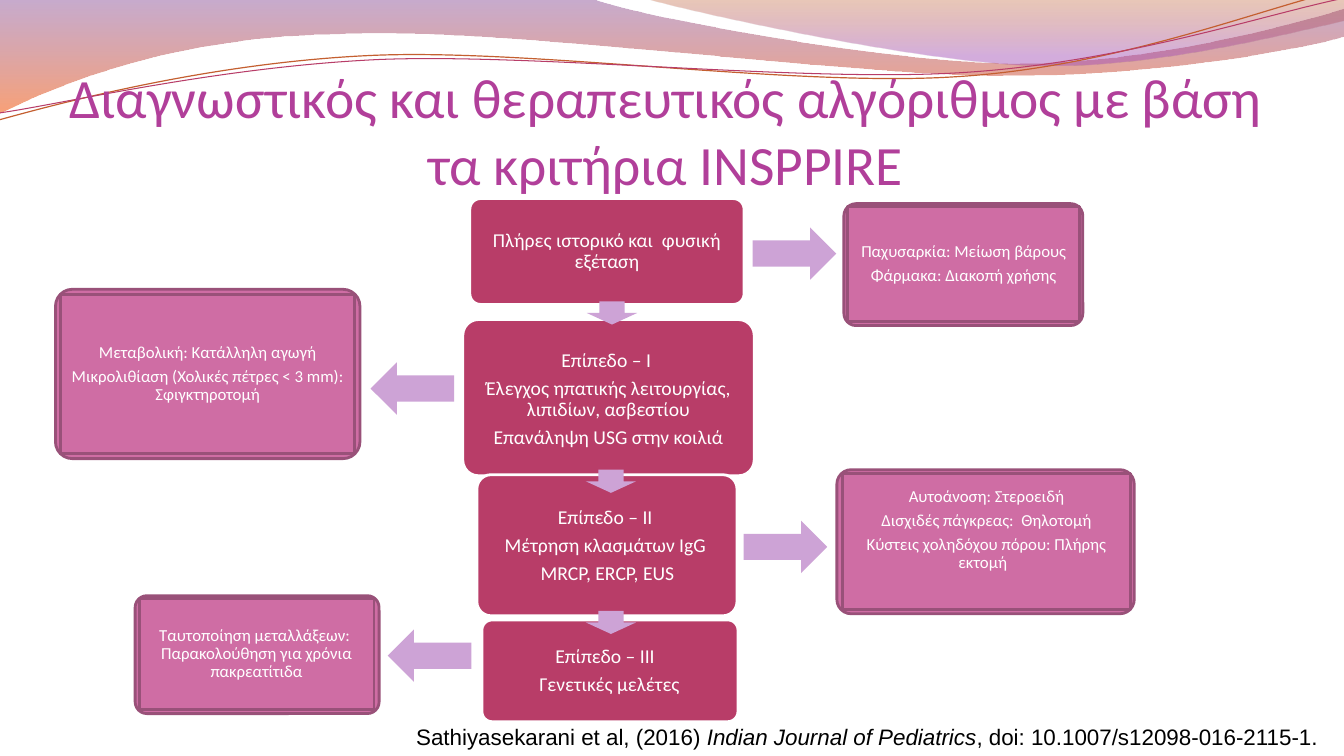
import math
from dataclasses import dataclass
from typing import Any

from lxml import etree
from pptx import Presentation
from pptx import util as u
from pptx.dml import color
from pptx.enum import shapes, text
from pptx.oxml import ns

PX = 9144
ROSE, PINK, PLUM, LILAC, WHITE = "B83D68", "CF6DA4", "995179", "CDA3D6", "FFFFFF"
SHAPE = shapes.MSO_SHAPE
TILT = 2.7
Point = tuple[float, float]
Rect = tuple[int, int, int, int]


@dataclass
class Band:
    steps: str
    pts: list[Point]
    stops: list[tuple[float, str, int]]


@dataclass
class Thread:
    pts: list[Point]
    hub: Point
    hue: str
    width: float


@dataclass
class Box:
    at: Rect
    core: Rect
    pad: int
    lines: list[str]
    foot: int = 0


@dataclass
class Arrow:
    at: Rect
    turn: int = 0


BANDS = [
    Band("LCCLCCL", [(0, 0), (587, -1), (634, 17), (885, 63), (1011, 63),
                     (1138, 63), (1278, 26), (1333, 9), (1335, 36),
                     (1311, 44), (1160, 76), (994, 75), (829, 75), (509, 28), (343, 34),
                     (172, 36), (61, 83), (-1, 113), (0, 0)],
         [(0, "834591", 45), (1, "F35307", 55)]),
    Band("CCLL", [(639, -1), (679, 11), (909, 62), (1025, 65),
                  (1141, 69), (1282, 32), (1333, 21), (1333, 0), (639, -1)],
         [(0, "B74915", 30), (0.8, "A14BB4", 45)]),
]
BANDS[0].steps = "LCCLCCCL"
THREADS = [
    Thread([(-1, 119), (64, 101), (211, 62), (369, 55), (527, 48), (790, 87), (950, 76),
            (1110, 66), (1252, 8), (1331, -10)], (665, 57), "C45F30", 0.85),
    Thread([(0, 112), (63, 103), (218, 66), (378, 59), (537, 53), (796, 82), (955, 72),
            (1115, 62), (1255, 14), (1334, -2)], (667, 59), ROSE, 0.75),
]
STAGES = [
    Box((466, 197, 272, 105), (470, 200, 264, 99), 5, ["Πλήρες ιστορικό και  φυσική εξέταση"]),
    Box((459, 317, 289, 155), (473, 327, 261, 139), 5,
        ["Επίπεδο – Ι ", "Έλεγχος ηπατικής λειτουργίας, λιπιδίων, ασβεστίου",
         "Επανάληψη USG στην κοιλιά"]),
    Box((473, 471, 258, 140), (477, 476, 251, 132), 5,
        ["Επίπεδο – ΙΙ ", "Μέτρηση κλασμάτων IgG ", "MRCP, ERCP, EUS"]),
    Box((478, 615, 254, 101), (482, 618, 245, 95), 5, ["Επίπεδο – ΙΙΙ  ", "Γενετικές μελέτες"]),
]
CARES = [
    Box((837, 202, 237, 121), (841, 205, 230, 114), 4,
        ["Παχυσαρκία: Μείωση βάρους", "Φάρμακα: Διακοπή χρήσης"]),
    Box((55, 287, 302, 168), (60, 292, 292, 158), 3,
        ["Μεταβολική: Κατάλληλη αγωγή", "Μικρολιθίαση (Χολικές πέτρες < 3 mm): Σφιγκτηροτομή"]),
    Box((830, 466, 295, 143), (836, 470, 285, 135), 5,
        ["Αυτοάνοση: Στεροειδή", "Δισχιδές πάγκρεας:  Θηλοτομή",
         "Κύστεις χοληδόχου πόρου: Πλήρης εκτομή  "], 24),
    Box((134, 591, 242, 117), (138, 594, 233, 110), 5,
        ["Ταυτοποίηση μεταλλάξεων:  Παρακολούθηση για χρόνια πακρεατίτιδα"]),
]
ARROWS = [
    Arrow((582, 299, 50, 23)), Arrow((581, 466, 50, 23)), Arrow((581, 606, 50, 23)),
    Arrow((762, 210, 52, 83), 270), Arrow((383, 344, 52, 83), 90),
    Arrow((753, 501, 52, 83), 270), Arrow((400, 609, 52, 83), 90),
]


def tint(hue: str) -> color.RGBColor:
    return color.RGBColor.from_string(hue)


def scale(at: Rect) -> list[int]:
    return [v * PX for v in at]


def spin(pt: Point, hub: Point) -> Point:
    sin, cos = math.sin(math.radians(TILT)), math.cos(math.radians(TILT))
    x, y = pt[0] - hub[0], pt[1] - hub[1]
    return hub[0] + x * cos - y * sin, hub[1] + x * sin + y * cos


def outline(pool: Any, pts: list[Point], steps: str, close: bool) -> Any:
    spots = [(round(x * PX), round(y * PX)) for x, y in pts]
    pen = pool.build_freeform(*spots[0], scale=1.0)
    pen.add_line_segments(spots[1:], close=close)
    form = pen.convert_to_shape()
    form.shadow.inherit = False
    legs = iter(list(form.element.iter(ns.qn("a:lnTo"))))
    for step in steps:
        leg = next(legs)
        if step == "C":
            leg.tag = ns.qn("a:cubicBezTo")
            for more in (next(legs), next(legs)):
                leg.append(more[0])
                more.getparent().remove(more)
    return form


def draw_band(pool: Any, band: Band) -> None:
    form = outline(pool, band.pts, band.steps, True)
    form.line.fill.background()
    form.fill.gradient()
    form.fill.gradient_angle = 270
    for stop, (spot, hue, _) in zip(form.fill.gradient_stops, band.stops):
        stop.position = spot
        stop.color.rgb = tint(hue)
    for node, (_, _, alpha) in zip(form.element.iter(ns.qn("a:srgbClr")), band.stops):
        etree.SubElement(node, ns.qn("a:alpha"), val=str(alpha * 1000))


def draw_thread(pool: Any, thread: Thread) -> None:
    form = outline(pool, [spin(pt, thread.hub) for pt in thread.pts], "CCC", False)
    form.rotation = 360 - TILT
    form.fill.background()
    form.line.color.rgb = tint(thread.hue)
    form.line.width = u.Pt(thread.width)


def add_form(pool: Any, kind: Any, at: Rect, fill: str, edge: str = "") -> Any:
    form = pool.add_shape(kind, *scale(at))
    form.shadow.inherit = False
    form.fill.solid()
    form.fill.fore_color.rgb = tint(fill)
    if edge:
        form.line.color.rgb = tint(edge)
        form.line.width = u.Pt(2)
    else:
        form.line.fill.background()
    if kind == SHAPE.ROUNDED_RECTANGLE:
        form.adjustments[0] = 0.1
    return form


def add_run(para: Any, words: str, size: float, hue: str, face: str = "Calibri",
            slant: bool = False) -> None:
    run = para.add_run()
    run.text = words
    run.font.name = face
    run.font.size = u.Pt(size)
    run.font.italic = slant
    run.font.color.rgb = tint(hue)


def inset(frame: Any, left: int, top: int, right: int, foot: int) -> None:
    frame.margin_left, frame.margin_top = left * PX, top * PX
    frame.margin_right, frame.margin_bottom = right * PX, foot * PX


def write(form: Any, box: Box, size: int) -> None:
    frame = form.text_frame
    frame.word_wrap = True
    frame.vertical_anchor = text.MSO_ANCHOR.MIDDLE
    inset(frame, box.pad, box.pad, box.pad, box.pad + box.foot)
    for i, line in enumerate(box.lines):
        para = frame.add_paragraph() if i else frame.paragraphs[0]
        para.alignment = text.PP_ALIGN.CENTER
        para.line_spacing = 0.9
        para.space_after = u.Pt(size * 0.35)
        add_run(para, line, size, WHITE)


def draw_stage(pool: Any, box: Box) -> None:
    add_form(pool, SHAPE.ROUNDED_RECTANGLE, box.at, ROSE, WHITE)
    write(pool.add_textbox(*scale(box.core)), box, 14)


def draw_care(pool: Any, box: Box) -> None:
    add_form(pool, SHAPE.ROUNDED_RECTANGLE, box.at, PINK, PLUM)
    write(add_form(pool, SHAPE.RECTANGLE, box.core, PINK, PLUM), box, 12)


def set_title(page: Any) -> None:
    title = page.shapes.title
    title.left, title.top, title.width, title.height = scale((55, 70, 1211, 125))
    frame = title.text_frame
    frame.word_wrap = True
    frame.auto_size = text.MSO_AUTO_SIZE.NONE
    frame.vertical_anchor = text.MSO_ANCHOR.BOTTOM
    inset(frame, 0, 5, 0, 0)
    para = frame.paragraphs[0]
    para.alignment = text.PP_ALIGN.CENTER
    add_run(para, "Διαγνωστικός και θεραπευτικός αλγόριθμος με βάση τα κριτήρια INSPPIRE",
            39.6, "B13F9A")
    title.element.getparent().append(title.element)


def add_cite(page: Any) -> None:
    frame = page.shapes.add_textbox(*scale((403, 713, 930, 37))).text_frame
    frame.word_wrap = True
    for words, slant in (("Sathiyasekarani et al, (2016)", False),
                         (" Indian Journal of Pediatrics", True),
                         (", doi: 10.1007/s12098-016-2115-1.", False)):
        add_run(frame.paragraphs[0], words, 16, "000000", "Arial", slant)


def main() -> None:
    deck = Presentation()
    deck.slide_width, deck.slide_height = 1333 * PX, 750 * PX
    page = deck.slides.add_slide(deck.slide_layouts[5])
    for band in BANDS:
        draw_band(page.shapes, band)
    pool = page.shapes.add_group_shape().shapes
    for thread in THREADS:
        draw_thread(pool, thread)
    for stage, care in zip(STAGES, CARES):
        draw_stage(page.shapes.add_group_shape().shapes, stage)
        draw_care(page.shapes.add_group_shape().shapes, care)
    for arrow in ARROWS:
        add_form(page.shapes, SHAPE.DOWN_ARROW, arrow.at, LILAC).rotation = arrow.turn
    set_title(page)
    add_cite(page)
    deck.save("out.pptx")


if __name__ == "__main__":
    main()
